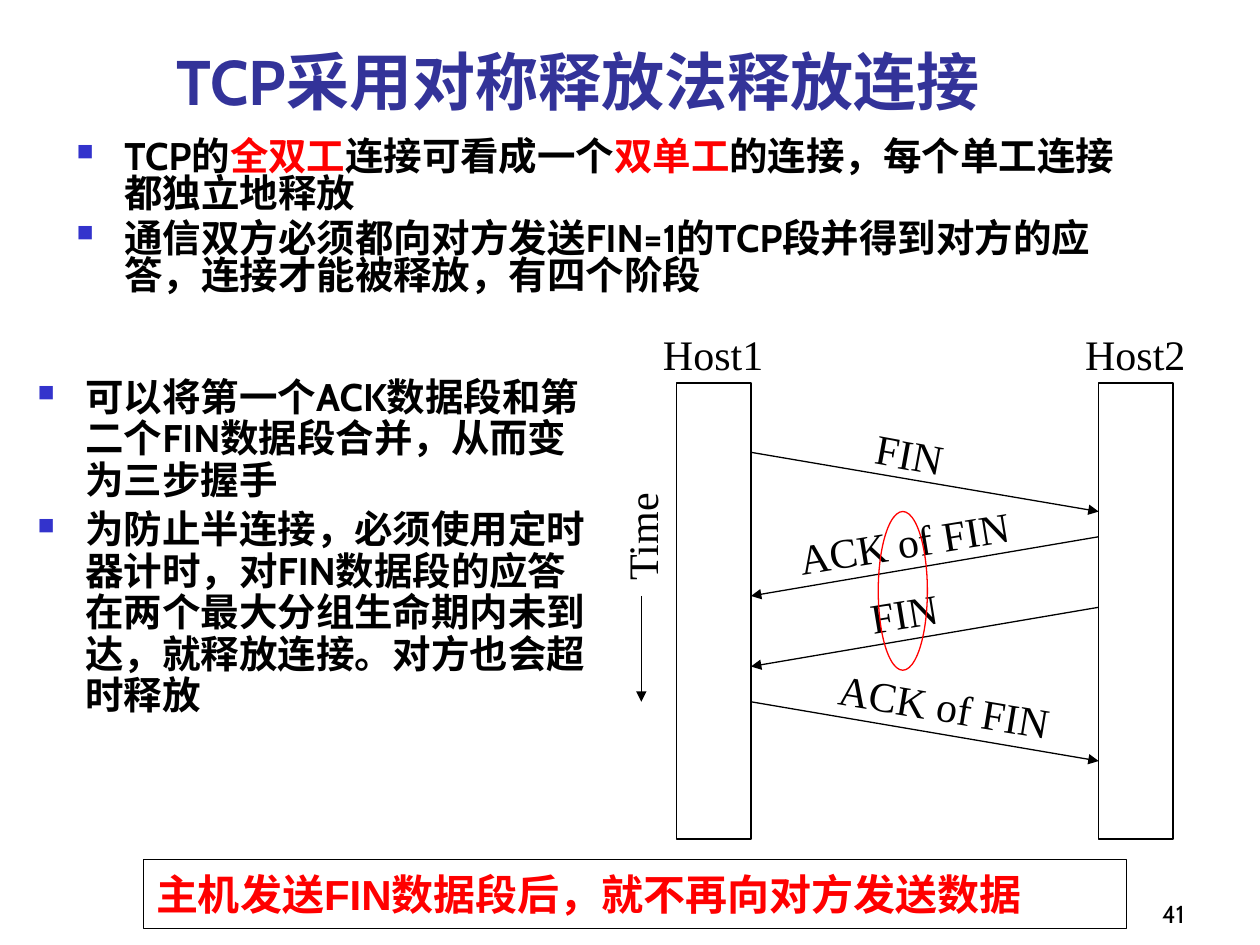
from lxml import etree
from pptx import Presentation
from pptx.dml.color import RGBColor
from pptx.enum.shapes import MSO_CONNECTOR, MSO_SHAPE
from pptx.enum.text import MSO_ANCHOR, PP_ALIGN
from pptx.oxml.ns import qn
from pptx.util import Inches, Pt

STRAIGHT = MSO_CONNECTOR.STRAIGHT
RECT, OVAL = MSO_SHAPE.RECTANGLE, MSO_SHAPE.OVAL
TOP, MIDDLE, BOTTOM = MSO_ANCHOR.TOP, MSO_ANCHOR.MIDDLE, MSO_ANCHOR.BOTTOM
LEFT, CENTER, RIGHT = PP_ALIGN.LEFT, PP_ALIGN.CENTER, PP_ALIGN.RIGHT
BLACK, WHITE, RED, NAVY, BLUE = "000000", "FFFFFF", "FF0000", "333399", "3333CC"

HEADING = {"name": "Cabin", "size": Pt(36), "bold": True}
BODY = {"name": "Cabin", "size": Pt(22), "bold": True}
NUMBER = {"name": "Cabin", "size": Pt(14)}
LABEL = {"name": "Times New Roman", "size": Pt(24)}
NOTICE = {"name": "Arial", "size": Pt(24), "bold": True}


def rgb(value):
    return RGBColor.from_string(value)


def assign(target, values):
    for key, value in values.items():
        setattr(target, key, value)


class Board:
    """Draws styled elements on one slide, placed on a grid of 100 columns by 75 rows."""

    def __init__(self, deck):
        self.slide = deck.slides.add_slide(deck.slide_layouts[6])
        self.column = deck.slide_width / 100
        self.row = deck.slide_height / 75

    def place(self, *cells):
        units = (self.column, self.row) * 2
        return [round(cell * unit) for cell, unit in zip(cells, units)]

    def shape(self, kind, cells, line=None, fill=None):
        item = self.slide.shapes.add_shape(kind, *self.place(*cells))
        item.shadow.inherit = False
        if fill:
            item.fill.solid()
            item.fill.fore_color.rgb = rgb(fill)
        else:
            item.fill.background()
        if line:
            item.line.color.rgb = rgb(line)
            item.line.width = Pt(0.75)
        else:
            item.line.fill.background()
        return item

    def add_runs(self, paragraph, runs, font):
        for wording, color in runs:
            run = paragraph.add_run()
            run.text = wording
            assign(run.font, font)
            run.font.color.rgb = rgb(color)

    def text(self, cells, runs, font, align=LEFT, anchor=TOP, turn=0, inset=None, host=None):
        host = host or self.slide.shapes.add_textbox(*self.place(*cells))
        host.rotation = turn
        frame = host.text_frame
        assign(frame, {"word_wrap": True, "vertical_anchor": anchor})
        if inset is not None:
            sides = ("left", "right", "top", "bottom")
            assign(frame, {f"margin_{side}": inset for side in sides})
        frame.paragraphs[0].alignment = align
        self.add_runs(frame.paragraphs[0], runs, font)

    def bullets(self, cells, points, spacing):
        frame = self.slide.shapes.add_textbox(*self.place(*cells)).text_frame
        frame.word_wrap = True
        for index, runs in enumerate(points):
            paragraph = frame.add_paragraph() if index else frame.paragraphs[0]
            assign(paragraph, {"line_spacing": spacing, "space_before": Pt(4.4)})
            self.add_runs(paragraph, runs, BODY)
            props = paragraph._p.get_or_add_pPr()
            props.set("marL", str(Inches(0.38)))
            props.set("indent", str(-Inches(0.38)))
            tint = etree.SubElement(props, qn("a:buClr"))
            etree.SubElement(tint, qn("a:srgbClr"), val=BLUE)
            etree.SubElement(props, qn("a:buSzPct"), val="60000")
            etree.SubElement(props, qn("a:buChar"), char="■")

    def arrow(self, *ends):
        item = self.slide.shapes.add_connector(STRAIGHT, *self.place(*ends))
        item.line.color.rgb = rgb(BLACK)
        item.line.width = Pt(0.75)
        etree.SubElement(item.line._get_or_add_ln(), qn("a:tailEnd"), type="triangle")
        etree.SubElement(item._element.spPr, qn("a:effectLst"))


def main():
    deck = Presentation()
    assign(deck, {"slide_width": Inches(10), "slide_height": Inches(7.5)})
    board = Board(deck)

    board.shape(RECT, (0, 0, 100, 75), fill=WHITE)
    board.text((74.2, 69.2, 20.8, 5), [("41", BLACK)], NUMBER, RIGHT, BOTTOM)
    board.text((13, 2.8, 70, 7.1), [("TCP采用对称释放法释放连接", NAVY)], HEADING, anchor=BOTTOM)
    board.bullets((5.1, 10.7, 85, 13.4), [
        [("TCP的", BLACK), ("全双工", RED), ("连接可看成一个", BLACK),
         ("双单工", RED), ("的连接，每个单工连接都独立地释放", BLACK)],
        [("通信双方必须都向对方发送FIN=1的TCP段并得到对方的应答，连接才能被释放，有四个阶段", BLACK)],
    ], 0.8)

    bar_width, host1, host2 = 5.9, 53.7, 87.2
    near, far, drop = host1 + bar_width, host2, 4.7
    for name, left in (("Host1", host1), ("Host2", host2)):
        board.shape(RECT, (left, 30.4, bar_width, 36.2), BLACK)
        board.text((left - 3.2, 25.6, 12.2, 5), [(name, BLACK)], LABEL, CENTER)

    segments = [
        ("FIN", near, far, 35.9, 65.9, 34, 12.6, 10.4),
        ("ACK of FIN", far, near, 42.6, 63.1, 41, 17.3, 350.6),
        ("FIN", far, near, 48.2, 63.1, 46.6, 17.3, 350.6),
        ("ACK of FIN", near, far, 55.7, 66.3, 54, 17.3, 9.4),
    ]
    for segment, start, end, sent, left, top, width, turn in segments:
        board.arrow(start, sent, end, sent + drop)
        board.text((left, top, width, 4), [(segment, BLACK)], LABEL, CENTER, turn=turn, inset=0)

    board.text((44.8, 40.1, 12.2, 5), [("Time", BLACK)], LABEL, CENTER, turn=270)
    board.arrow(50.9, 47.3, 50.9, 55.7)

    board.bullets((2, 29.5, 45.5, 39.5), [
        [("可以将第一个ACK数据段和第二个FIN数据段合并，从而变为三步握手", BLACK)],
        [("为防止半连接，必须使用定时器计时，对FIN数据段的应答在两个最大分组生命期内未到达，就释放连接。对方也会超时释放", BLACK)],
    ], 0.9)
    board.shape(OVAL, (69.7, 40.6, 3.9, 12.6), RED)

    notice = (11.4, 68.2, 78, 5.5)
    board.text(notice, [("主机发送FIN数据段后，就不再向对方发送数据", RED)], NOTICE,
               anchor=MIDDLE, host=board.shape(RECT, notice, BLACK, WHITE))
    deck.save("out.pptx")


if __name__ == "__main__":
    main()
